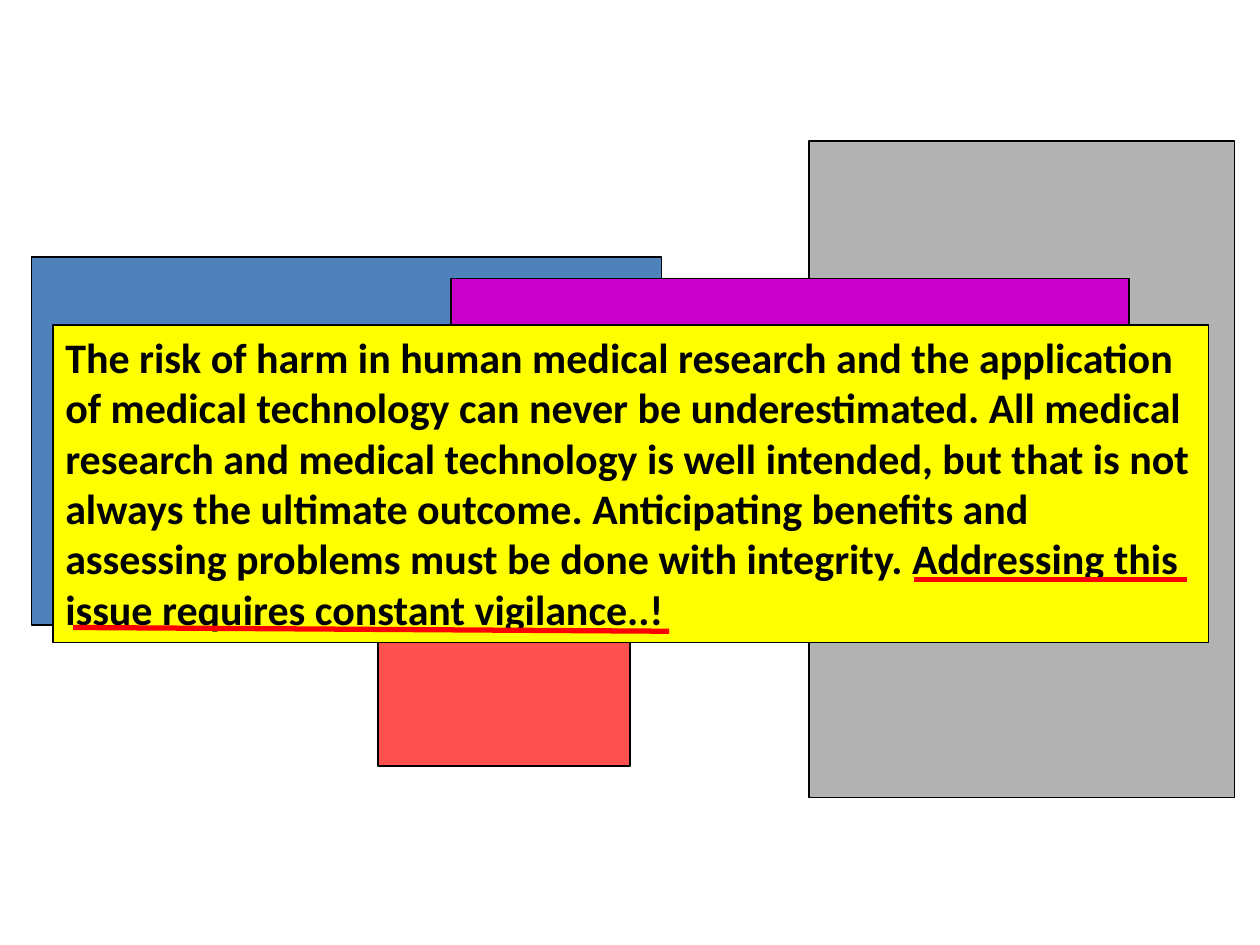
from lxml import etree
from pptx import Presentation
from pptx.dml.color import RGBColor
from pptx.enum.shapes import MSO_CONNECTOR, MSO_SHAPE
from pptx.enum.text import MSO_ANCHOR, MSO_AUTO_SIZE, PP_ALIGN
from pptx.oxml.ns import qn
from pptx.util import Inches, Pt

RECTANGLE = MSO_SHAPE.RECTANGLE
STRAIGHT = MSO_CONNECTOR.STRAIGHT
TOP = MSO_ANCHOR.TOP
LEFT = PP_ALIGN.LEFT
FIT_SHAPE = MSO_AUTO_SIZE.SHAPE_TO_FIT_TEXT

BLACK = RGBColor(0x00, 0x00, 0x00)
BLUE = RGBColor(0x4F, 0x81, 0xBD)
GRAY = RGBColor(0xB2, 0xB2, 0xB2)
PURPLE = RGBColor(0xCC, 0x00, 0xCC)
CORAL = RGBColor(0xFF, 0x50, 0x50)
YELLOW = RGBColor(0xFF, 0xFF, 0x00)
RED = RGBColor(0xFF, 0x00, 0x00)

STATEMENT = (
    "The risk of harm in human medical research and the application "
    "of medical technology can never be underestimated. All medical "
    "research and medical technology is well intended, but that is not "
    "always the ultimate outcome. Anticipating benefits and "
    "assessing problems must be done with integrity. Addressing this "
    "issue requires constant vigilance..!"
)


def add_panel(shapes, left, top, width, height, color):
    panel = shapes.add_shape(
        RECTANGLE, Inches(left), Inches(top), Inches(width), Inches(height)
    )
    panel.shadow.inherit = False
    panel.fill.solid()
    panel.fill.fore_color.rgb = color
    panel.line.color.rgb = BLACK
    panel.line.width = Pt(0.75)
    return panel


prs = Presentation()
prs.slide_width = Inches(10)
prs.slide_height = Inches(7.5)
slide = prs.slides.add_slide(prs.slide_layouts[6])

backdrop = slide.shapes.add_group_shape()
for left, top, width, height, color in [
    (0.25, 2.04, 5, 2.92, BLUE),
    (6.42, 1.12, 3.38, 5.21, GRAY),
    (3.58, 2.21, 5.38, 2.08, PURPLE),
    (3, 3.12, 2, 2.96, CORAL),
]:
    add_panel(backdrop.shapes, left, top, width, height, color)

statement_panel = add_panel(slide.shapes, 0.42, 2.58, 9.17, 2.52, YELLOW)
statement_frame = statement_panel.text_frame
statement_frame.word_wrap = True
statement_frame.auto_size = FIT_SHAPE
statement_frame.vertical_anchor = TOP
statement = statement_frame.paragraphs[0]
statement.alignment = LEFT
statement_run = statement.add_run()
statement_run.text = STATEMENT
statement_run.font.name = "Calibri"
statement_run.font.size = Pt(24)
statement_run.font.bold = True
statement_run.font.color.rgb = BLACK

for x1, y1, x2, y2 in [(7.25, 4.6, 9.42, 4.6), (0.58, 4.98, 5.31, 5.01)]:
    underline = slide.shapes.add_connector(
        STRAIGHT, Inches(x1), Inches(y1), Inches(x2), Inches(y2)
    )
    underline.line.color.rgb = RED
    underline.line.width = Pt(3)
    etree.SubElement(underline._element.spPr, qn("a:effectLst"))

prs.save("out.pptx")
